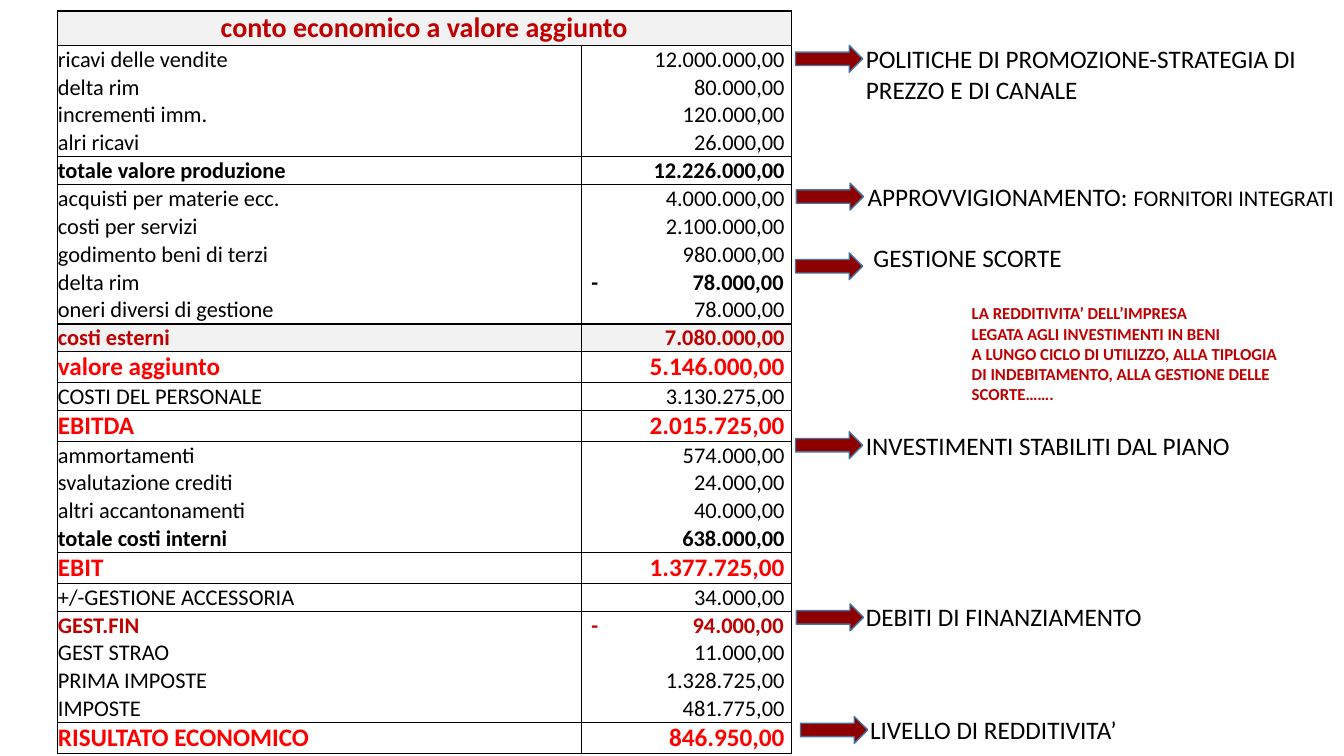
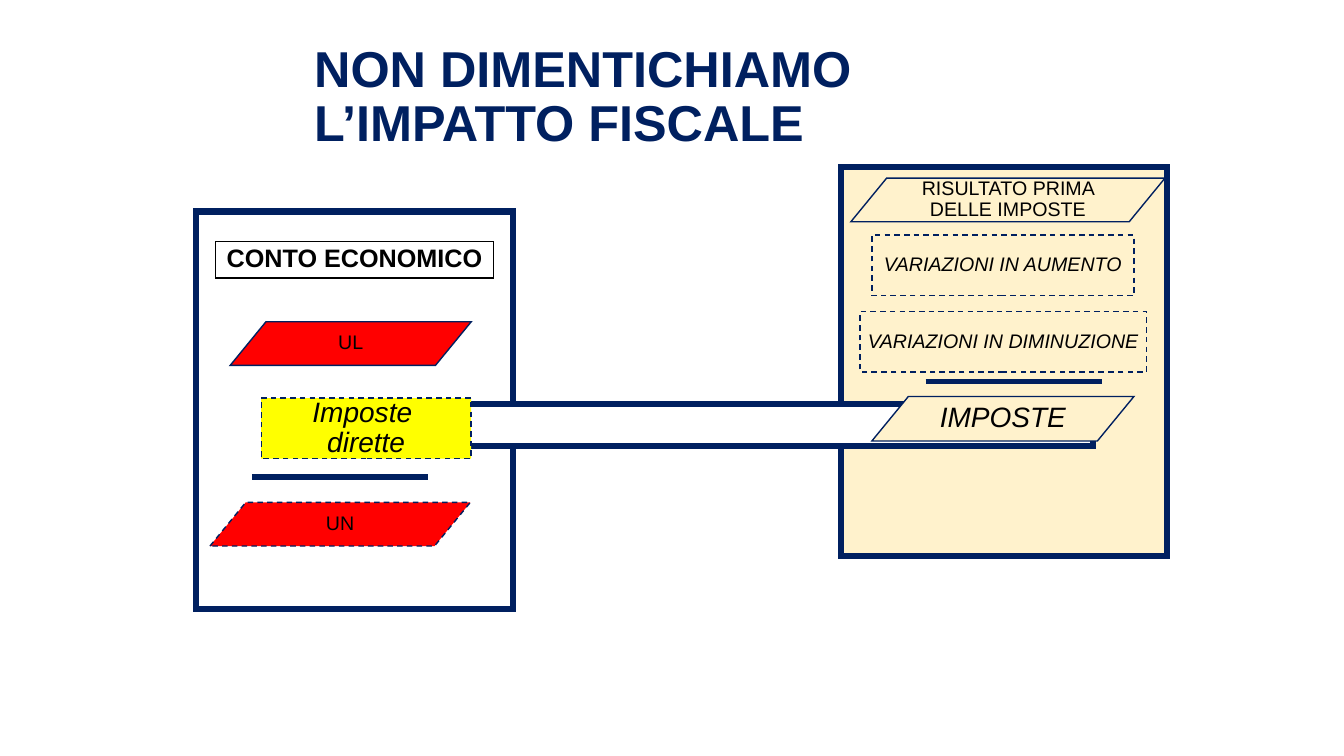
from dataclasses import dataclass

from lxml import etree
from pptx import Presentation
from pptx.dml.color import RGBColor
from pptx.enum.dml import MSO_LINE
from pptx.enum.shapes import MSO_CONNECTOR, MSO_SHAPE as SHAPE
from pptx.enum.text import MSO_ANCHOR as ANCHOR, MSO_AUTO_SIZE, PP_ALIGN as ALIGN
from pptx.oxml.ns import qn
from pptx.util import Emu, Pt


@dataclass(frozen=True)
class Theme:
    black: str = "000000"
    white: str = "FFFFFF"
    grey: str = "F2F2F2"
    red: str = "FF0000"
    dark_red: str = "C00000"
    arrow: str = "8E0000"
    arrow_edge: str = "43739E"
    navy: str = "002060"
    cream: str = "FFF2CC"
    yellow: str = "FFFF00"
    table_font: str = "Calibri"
    diagram_font: str = "Arial"
    title: int = 36
    header: int = 20
    key: int = 18
    body: int = 16
    small: int = 14
    callout: int = 12


THEME = Theme()

# The slide is a grid of 160 columns by 90 rows of square cells
COLUMNS, ROWS = 160, 90
CELL = 76200

presentation = Presentation()
presentation.slide_width = Emu(COLUMNS * CELL)
presentation.slide_height = Emu(ROWS * CELL)


def grid(*lengths):
    return [Emu(round(length * CELL)) for length in lengths]


def write(frame, text, font_name, size, color, bold=False, italic=False,
          align=ALIGN.LEFT, spacing=None):
    frame.text = text
    for paragraph in frame.paragraphs:
        paragraph.alignment = align
        if spacing:
            paragraph.line_spacing = spacing
        font = paragraph.font
        font.name, font.size = font_name, Pt(size)
        font.bold, font.italic = bold, italic
        font.color.rgb = RGBColor.from_string(color)


# ---- Slide 1: value-added income statement ----
slide = presentation.slides.add_slide(presentation.slide_layouts[6])

# Label, amount, style, and whether a rule closes the row
statement = [
    ("conto economico a valore aggiunto", "", "header", True),
    ("ricavi delle vendite", "12.000.000,00", "plain", False),
    ("delta rim", "80.000,00", "plain", False),
    ("incrementi imm.", "120.000,00", "plain", False),
    ("alri ricavi", "26.000,00", "plain", True),
    ("totale valore produzione", "12.226.000,00", "total", True),
    ("acquisti per materie ecc.", "4.000.000,00", "plain", False),
    ("costi per servizi", "2.100.000,00", "plain", False),
    ("godimento beni di terzi", "980.000,00", "plain", False),
    ("delta rim", "-\t78.000,00", "plain", False),
    ("oneri diversi di gestione", "78.000,00", "plain", True),
    ("costi esterni", "7.080.000,00", "shaded", True),
    ("valore aggiunto", "5.146.000,00", "key", True),
    ("COSTI DEL PERSONALE", "3.130.275,00", "plain", True),
    ("EBITDA", "2.015.725,00", "key", True),
    ("ammortamenti", "574.000,00", "plain", False),
    ("svalutazione crediti", "24.000,00", "plain", False),
    ("altri accantonamenti", "40.000,00", "plain", False),
    ("totale costi interni", "638.000,00", "total", True),
    ("EBIT", "1.377.725,00", "key", True),
    ("+/-GESTIONE ACCESSORIA", "34.000,00", "plain", True),
    ("GEST.FIN", "-\t94.000,00", "warning", False),
    ("GEST STRAO", "11.000,00", "plain", False),
    ("PRIMA IMPOSTE", "1.328.725,00", "plain", False),
    ("IMPOSTE", "481.775,00", "plain", True),
    ("RISULTATO ECONOMICO", "846.950,00", "key", True),
]
# Row height, type size, colour, bold, fill
row_styles = {
    "header": (4.1, THEME.header, THEME.dark_red, True, THEME.grey),
    "plain": (3.32, THEME.body, THEME.black, False, THEME.white),
    "total": (3.32, THEME.body, THEME.black, True, THEME.white),
    "shaded": (3.32, THEME.body, THEME.dark_red, True, THEME.grey),
    "warning": (3.32, THEME.body, THEME.dark_red, True, THEME.white),
    "key": (3.65, THEME.key, THEME.red, True, THEME.white),
}
column_widths = grid(62.4, 25)
table_height = sum(row_styles[style][0] for _, _, style, _ in statement)
table = slide.shapes.add_table(len(statement), 2,
                               *grid(6.8, 1.3, 87.4, table_height)).table
table.first_row = table.horz_banding = False
for column, width in zip(table.columns, column_widths):
    column.width = width

ruled_above = True
for row_index, (label, amount, style, closes) in enumerate(statement):
    height, size, color, bold, fill = row_styles[style]
    table.rows[row_index].height = grid(height)[0]
    for column_index, text in enumerate((label, amount)):
        cell = table.cell(row_index, column_index)
        negative = text.startswith("-")
        cell.vertical_anchor = ANCHOR.BOTTOM
        cell.margin_left, cell.margin_right, cell.margin_top, cell.margin_bottom = grid(
            1.2 if negative else 0.1, 0.8 if column_index else 0.1, 0, 0)

        # Cell rules: sides always, top and bottom only around a group
        properties = cell._tc.get_or_add_tcPr()
        for side, shown in (("L", True), ("R", True), ("T", ruled_above), ("B", closes)):
            rule = etree.SubElement(properties, qn(f"a:ln{side}"), w=str(Pt(1)))
            if shown:
                paint = etree.SubElement(rule, qn("a:solidFill"))
                etree.SubElement(paint, qn("a:srgbClr"), val=THEME.black)
            else:
                etree.SubElement(rule, qn("a:noFill"))
        cell.fill.solid()
        cell.fill.fore_color.rgb = RGBColor.from_string(fill)

        align = ALIGN.RIGHT if column_index and not negative else ALIGN.LEFT
        if style == "header":
            align = ALIGN.CENTER
        write(cell.text_frame, text, THEME.table_font, size, color, bold or negative,
              align=align)

        # A minus sign stands left, its amount at a right tab stop
        if negative:
            tabs = etree.Element(qn("a:tabLst"))
            etree.SubElement(tabs, qn("a:tab"), pos=str(grid(22.9)[0]), algn="r")
            cell.text_frame.paragraphs[0]._p.get_or_add_pPr().insert(0, tabs)
    ruled_above = closes
table.cell(0, 0).merge(table.cell(0, 1))

# Remarks: arrow left and top, text left and top, text, smaller ending
remarks = [
    (94.7, 5.4, 101.9, 4.6,
     "POLITICHE DI PROMOZIONE-STRATEGIA DI\nPREZZO E DI CANALE", ""),
    (94.8, 21.8, 102.1, 21, "APPROVVIGIONAMENTO: ", "FORNITORI INTEGRATI"),
    (94.7, 30.1, 102.8, 28.2, "GESTIONE SCORTE", ""),
    (94.7, 51.4, 101.9, 50.6, "INVESTIMENTI STABILITI DAL PIANO", ""),
    (94.8, 71.9, 101.9, 71, "DEBITI DI FINANZIAMENTO", ""),
    (95.3, 85.3, 102.4, 84.5, "LIVELLO DI REDDITIVITA’", ""),
]
for arrow_left, arrow_top, text_left, text_top, text, ending in remarks:
    arrow = slide.shapes.add_shape(SHAPE.RIGHT_ARROW, *grid(arrow_left, arrow_top, 8, 3.2))
    arrow.shadow.inherit = False
    arrow.fill.solid()
    arrow.fill.fore_color.rgb = RGBColor.from_string(THEME.arrow)
    arrow.line.color.rgb = RGBColor.from_string(THEME.arrow_edge)
    arrow.line.width = Pt(1)

    remark = slide.shapes.add_textbox(*grid(text_left, text_top, COLUMNS - text_left, 4.8))
    frame = remark.text_frame
    frame.word_wrap, frame.margin_right = True, 0
    write(frame, text, THEME.table_font, THEME.key, THEME.black)
    if ending:
        run = frame.paragraphs[0].add_run()
        run.text = ending
        run.font.size = Pt(THEME.body)

# Callout on profitability
callout = slide.shapes.add_textbox(*grid(114.5, 35.5, 45.5, 13.3))
callout.text_frame.word_wrap = True
write(callout.text_frame,
      "LA REDDITIVITA’ DELL’IMPRESA\n"
      "LEGATA AGLI INVESTIMENTI IN BENI\n"
      "A LUNGO CICLO DI UTILIZZO, ALLA TIPLOGIA\n"
      "DI INDEBITAMENTO, ALLA GESTIONE DELLE\n"
      "SCORTE…….",
      THEME.table_font, THEME.callout, THEME.dark_red, bold=True)

# ---- Slide 2: tax impact ----
slide = presentation.slides.add_slide(presentation.slide_layouts[5])

# Title
title = slide.shapes.title
title.left, title.top, title.width, title.height = grid(37.4, 5.2, 92.6, 13.1)
frame = title.text_frame
frame.margin_left = frame.margin_right = frame.margin_top = frame.margin_bottom = 0
frame.vertical_anchor, frame.auto_size = ANCHOR.TOP, MSO_AUTO_SIZE.NONE
frame.word_wrap = True
write(frame, "NON DIMENTICHIAMO L’IMPATTO FISCALE", THEME.diagram_font, THEME.title,
      THEME.navy, bold=True, spacing=0.9)

# Boxes from back to front: kind, place, fill, line width, dashed, text, size, emphasis
RECT, SLANT = SHAPE.RECTANGLE, SHAPE.PARALLELOGRAM
boxes = [
    (RECT, (23.3, 25.2, 37.8, 47.3), THEME.white, 4.5, False, "", 0, ""),
    (RECT, (25.6, 28.7, 33.2, 4.4), None, 0.75, False, "CONTO ECONOMICO", THEME.key, "bold"),
    (SLANT, (27.4, 38.3, 28.7, 5.2), THEME.red, 1, False, "UL", THEME.small, ""),
    (RECT, (100.1, 19.9, 38.8, 46.3), THEME.cream, 4.5, False, "", 0, ""),
    (RECT, (102.4, 37.1, 34.1, 7.2), THEME.cream, 1, True,
     "VARIAZIONI IN DIMINUZIONE", THEME.small, "italic"),
    (RECT, (103.8, 28, 31.2, 7.2), THEME.cream, 1, True,
     "VARIAZIONI IN AUMENTO", THEME.small, "italic"),
    (RECT, (36.5, 48.1, 93.6, 5), THEME.white, 4.5, False, "", 0, ""),
    (SLANT, (25, 59.8, 31, 5.2), THEME.red, 1, True, "UN", THEME.small, ""),
    (SLANT, (103.8, 47.2, 31.2, 5.3), THEME.cream, 1, False,
     "IMPOSTE", THEME.header, "italic"),
    (SLANT, (101.3, 21.2, 37.4, 5.2), THEME.cream, 1, False,
     "RISULTATO PRIMA DELLE IMPOSTE", THEME.small, ""),
    (RECT, (31.1, 47.4, 25, 7.2), THEME.yellow, 1, True,
     "Imposte \ndirette", THEME.header, "italic"),
]
for kind, place, fill, line_width, dashed, text, size, emphasis in boxes:
    shape = slide.shapes.add_shape(kind, *grid(*place))
    shape.shadow.inherit = False
    if fill:
        shape.fill.solid()
        shape.fill.fore_color.rgb = RGBColor.from_string(fill)
    else:
        shape.fill.background()
    shape.line.color.rgb = RGBColor.from_string(THEME.navy if fill else THEME.black)
    shape.line.width = Pt(line_width)
    if dashed:
        shape.line.dash_style = MSO_LINE.DASH
    # Square corners
    etree.SubElement(shape._element.spPr.find(qn("a:ln")), qn("a:miter"), lim="800000")
    if kind == SLANT:
        shape.adjustments[0] = 0.82
    if text:
        frame = shape.text_frame
        frame.word_wrap = kind == SLANT
        frame.vertical_anchor = ANCHOR.MIDDLE
        frame.margin_left, frame.margin_right, frame.margin_top, frame.margin_bottom = grid(
            1, 1, 0, 0)
        write(frame, text, THEME.diagram_font, size, THEME.black, emphasis == "bold",
              emphasis == "italic", ALIGN.CENTER, 0.9)

# Sum lines
for left, top in ((30, 56.8), (110.2, 45.4)):
    sum_line = slide.shapes.add_connector(MSO_CONNECTOR.STRAIGHT,
                                          *grid(left, top, left + 21, top))
    sum_line.line.color.rgb = RGBColor.from_string(THEME.navy)
    sum_line.line.width = Pt(3.75)
    etree.SubElement(sum_line._element.spPr, qn("a:effectLst"))

presentation.save("out.pptx")
